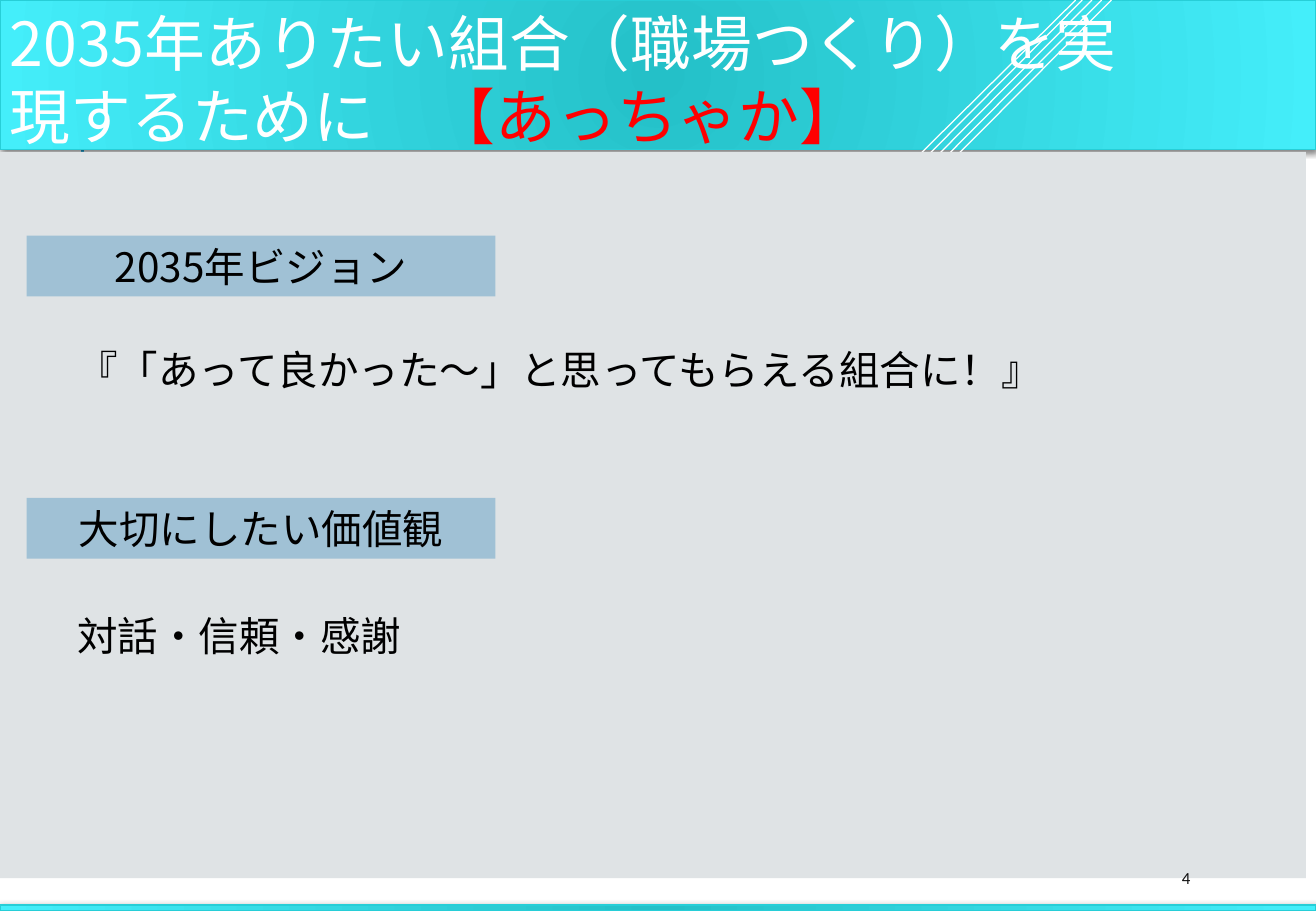
from lxml.etree import SubElement as Sub
from pptx import Presentation
from pptx.dml.color import RGBColor as RGB
from pptx.enum.shapes import MSO_CONNECTOR as Conn, MSO_SHAPE as Shape
from pptx.enum.text import MSO_ANCHOR as Anchor, MSO_AUTO_SIZE as Auto, PP_ALIGN as Align
from pptx.oxml.ns import qn
from pptx.util import Pt

WIDTH, HEIGHT = 780, 540
SANS, LATIN = "Noto Sans CJK JP", "Calibri"
WHITE = RGB(0xFF, 0xFF, 0xFF)
BLACK = RGB(0, 0, 0)
INK = RGB(0x0D, 0x0D, 0x0D)
RED = RGB(0xFF, 0, 0)
BLUE = RGB(0x1C, 0xAD, 0xE4)
TEAL = RGB(0x24, 0xC0, 0xC8)
CYAN = RGB(0x44, 0xEE, 0xFA)
EDGE = RGB(0x27, 0xCE, 0xD7)
GREY = RGB(0xDF, 0xE3, 0xE5)
LABEL = RGB(0xA0, 0xC1, 0xD5)

TOPICS = [
    (139.7, "2035年ビジョン", 200.9,
     "『「あって良かった～」と思ってもらえる組合に！』"),
    (295.2, "大切にしたい価値観", 358.6, "対話・信頼・感謝"),
]


def add_line(slide, start, end, color, width):
    line = slide.shapes.add_connector(Conn.STRAIGHT, *map(Pt, start + end))
    line.line.color.rgb = color
    line.line.width = Pt(width)
    Sub(line.element.spPr, qn("a:effectLst"))


def add_rect(slide, box, color):
    rect = slide.shapes.add_shape(Shape.RECTANGLE, *map(Pt, box))
    rect.shadow.inherit = False
    rect.fill.solid()
    rect.fill.fore_color.rgb = color
    rect.line.fill.background()
    return rect


def add_band(slide, top, height):
    band = add_rect(slide, (0, top, WIDTH, height), TEAL)
    band.line.color.rgb = EDGE
    band.line.width = Pt(0.75)
    band.fill.gradient()
    for stop, color, place in zip(band.fill.gradient_stops, (TEAL, CYAN), (0, 1)):
        stop.color.rgb = color
        stop.position = place
    props = band.element.spPr
    grad = props.find(qn("a:gradFill"))
    grad.remove(grad.find(qn("a:lin")))
    round_fill = Sub(grad, qn("a:path"), path="circle")
    Sub(round_fill, qn("a:fillToRect"), {side: "100000" for side in "ltrb"})
    shade = Sub(props.find(qn("a:effectLst")), qn("a:outerShdw"),
                blurRad=str(Pt(4)), dist=str(Pt(1)), dir="5400000", rotWithShape="0")
    black = Sub(shade, qn("a:srgbClr"), val="000000")
    Sub(black, qn("a:alpha"), val="50000")


def set_font(para, size, name, color=None):
    font = para.font
    font.size = Pt(size)
    if color is not None:
        font.color.rgb = color
    font.name = name
    Sub(font._element, qn("a:ea"), typeface=name)


def set_text(shape, text, size, name, color, align=Align.LEFT, left=7.2):
    frame = shape.text_frame
    frame.word_wrap = True
    frame.vertical_anchor = Anchor.MIDDLE
    frame.margin_left = Pt(left)
    para = frame.paragraphs[0]
    para.text = text
    para.alignment = align
    set_font(para, size, name, color)


def add_text(slide, box, *args, **opts):
    set_text(slide.shapes.add_textbox(*map(Pt, box)), *args, **opts)


def set_title(slide):
    title = slide.shapes.title
    title.left, title.top, title.width, title.height = map(Pt, (-1.4, -2.2, 680.4, 97.9))
    frame = title.text_frame
    frame.word_wrap = True
    frame.auto_size = Auto.NONE
    frame.vertical_anchor = Anchor.MIDDLE
    para = frame.paragraphs[0]
    para.alignment = Align.LEFT
    para.line_spacing = Pt(43.2)
    for text, color in (("2035年ありたい組合（職場つくり）を実現するために\u3000".replace("\u3000", "　"), WHITE),
                        ("【あっちゃか】", RED)):
        run = para.add_run()
        run.text = text
        run.font.color.rgb = color
    set_font(para, 36, SANS)
    slide.shapes._spTree.append(title.element)


def add_frame(slide):
    add_line(slide, (49, 136.8), (49, 64.8), BLUE, 1.5)
    add_band(slide, 0, 88.6)
    add_line(slide, (528.5, 108), (637.6, 0), WHITE, 0.75)
    for step in range(4):
        left = 530.6 + 5.76 * step
        add_line(slide, (left, 111.6), (left + 110.9, 0), WHITE, 0.75)
    add_band(slide, 536.4, 3.6)


def main():
    deck = Presentation()
    deck.slide_width, deck.slide_height = Pt(WIDTH), Pt(HEIGHT)
    slide = deck.slides.add_slide(deck.slide_layouts[5])
    add_frame(slide)
    set_title(slide)
    add_rect(slide, (0, 90, 774, 430.6), GREY)
    add_text(slide, (693.4, 509.8, 62.6, 21.6), "4", 10, LATIN, INK)
    for top, label, below, text in TOPICS:
        rect = add_rect(slide, (15.8, top, 277.9, 36), LABEL)
        set_text(rect, label, 24, SANS, BLACK, Align.CENTER)
        add_text(slide, (33.1, below, 640.8, 36), text, 24, SANS, BLACK, left=12.6)
    deck.save("out.pptx")


if __name__ == "__main__":
    main()
